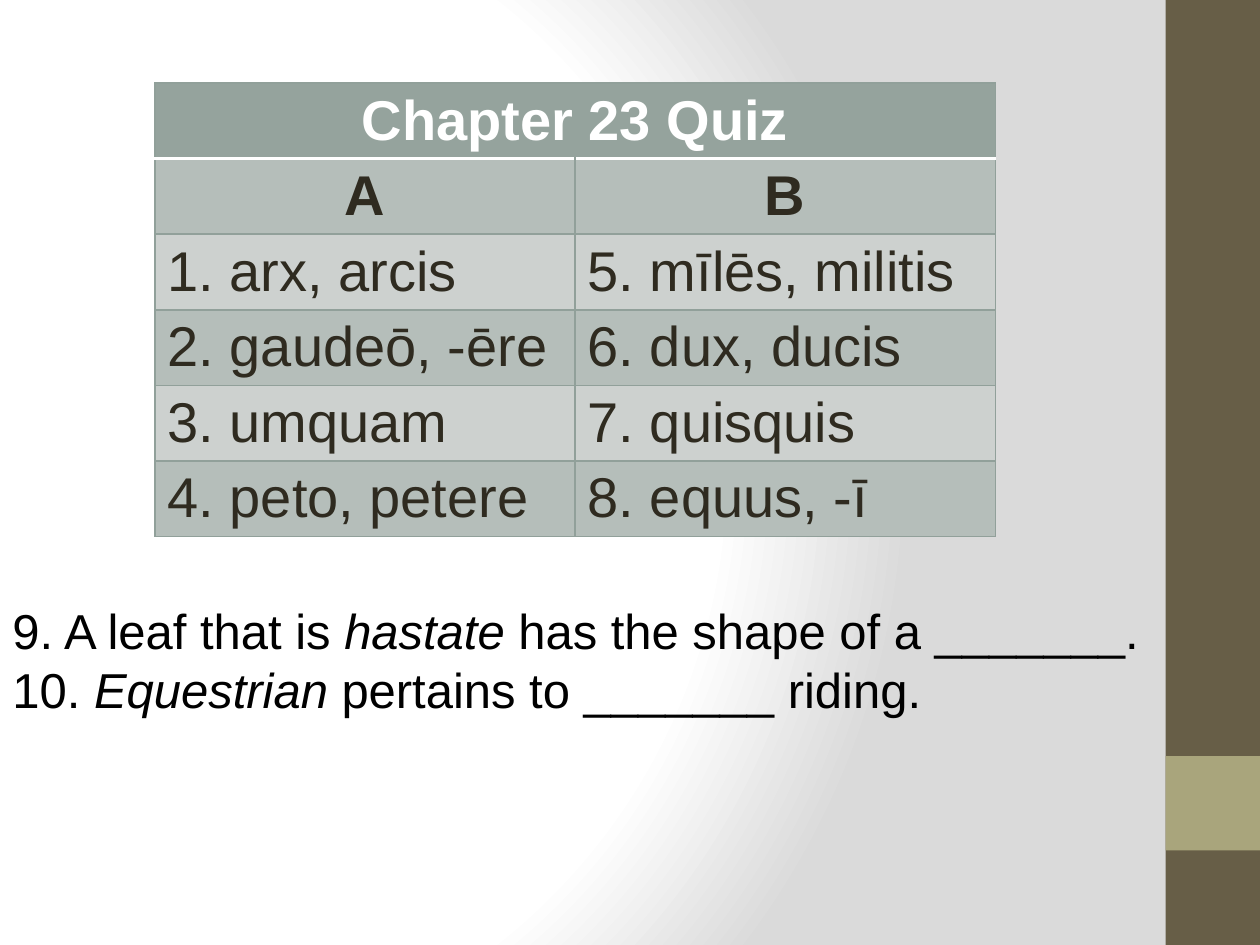
from dataclasses import dataclass

from lxml.etree import SubElement
from pptx import Presentation
from pptx.dml.color import RGBColor as Rgb
from pptx.enum.shapes import MSO_SHAPE as Shape
from pptx.enum.text import MSO_AUTO_SIZE as AutoSize, PP_ALIGN as Align
from pptx.oxml import parse_xml
from pptx.oxml.ns import nsdecls, qn
from pptx.util import Inches, Pt


@dataclass(frozen=True)
class Theme:
    font: str = "Arial"
    table_size: int = 32
    question_size: int = 28
    white: str = "FFFFFF"
    shade: str = "DADADA"
    black: str = "000000"
    ink: str = "2F2B20"
    sidebar: str = "675E47"
    accent: str = "A9A57C"
    header: str = "95A39D"
    dark_band: str = "B5BEBA"
    light_band: str = "CDD1CF"
    grid: str = "91A09A"


THEME = Theme()


def add_text(paragraph, text, *, size, color, bold=False, italic=False):
    run = paragraph.add_run()
    run.text = text
    font = run.font
    font.name, font.size = THEME.font, Pt(size)
    font.bold, font.italic = bold, italic
    font.color.rgb = Rgb.from_string(color)


def add_border(cell, side, color, width):
    line = SubElement(cell._tc.get_or_add_tcPr(), qn(f"a:ln{side}"), w=str(Pt(width)))
    fill = SubElement(line, qn("a:solidFill"))
    SubElement(fill, qn("a:srgbClr"), val=color)


class SlideBuilder:
    def __init__(self, slide, theme):
        self.slide = slide
        self.theme = theme

    def background(self):
        colors = ((0, self.theme.white), (75, self.theme.white), (100, self.theme.shade))
        stops = "".join(
            f'<a:gs pos="{position * 1000}"><a:srgbClr val="{color}"/></a:gs>'
            for position, color in colors
        )
        self.slide.element.cSld.insert(0, parse_xml(
            f'<p:bg {nsdecls("p", "a")}><p:bgPr><a:gradFill rotWithShape="1">'
            f'<a:gsLst>{stops}</a:gsLst><a:path path="circle">'
            '<a:fillToRect l="20000" t="50000" r="100000" b="50000"/></a:path>'
            '</a:gradFill><a:effectLst/></p:bgPr></p:bg>'
        ))

    def block(self, left, top, width, height, color):
        block = self.slide.shapes.add_shape(
            Shape.RECTANGLE, Inches(left), Inches(top), Inches(width), Inches(height))
        block.shadow.inherit = False
        block.fill.solid()
        block.fill.fore_color.rgb = Rgb.from_string(color)
        block.line.fill.background()

    def quiz_table(self, heading, rows, left, top, width, row_height):
        theme = self.theme
        grid = [(heading, ""), *rows]
        table = self.slide.shapes.add_table(
            len(grid), 2, Inches(left), Inches(top),
            Inches(width), Inches(row_height * len(grid))).table
        for row_index, entries in enumerate(grid):
            is_heading = row_index == 0
            is_bold = row_index < 2
            band = theme.dark_band if row_index % 2 else theme.light_band
            rules = {side: (theme.grid, 1) for side in "LRTB"}
            if is_bold:
                rules["B" if is_heading else "T"] = (theme.white, 2)
            for column, entry in enumerate(entries):
                cell = table.cell(row_index, column)
                for side, (color, line_width) in rules.items():
                    add_border(cell, side, color, line_width)
                cell.fill.solid()
                cell.fill.fore_color.rgb = Rgb.from_string(
                    theme.header if is_heading else band)
                if entry:
                    paragraph = cell.text_frame.paragraphs[0]
                    paragraph.alignment = Align.CENTER if is_bold else Align.LEFT
                    add_text(paragraph, entry, size=theme.table_size, bold=is_bold,
                             color=theme.white if is_heading else theme.ink)
        table.cell(0, 0).merge(table.cell(0, 1))

    def questions(self, questions, left, top, width, height):
        frame = self.slide.shapes.add_textbox(
            Inches(left), Inches(top), Inches(width), Inches(height)).text_frame
        frame.word_wrap = True
        frame.auto_size = AutoSize.SHAPE_TO_FIT_TEXT
        for index, (opening, term, ending) in enumerate(questions):
            paragraph = frame.add_paragraph() if index else frame.paragraphs[0]
            for text in (opening, term, ending):
                add_text(paragraph, text, size=self.theme.question_size,
                         color=self.theme.black, italic=text == term)


def main():
    deck = Presentation()
    deck.slide_width, deck.slide_height = Inches(10), Inches(7.5)
    quiz = SlideBuilder(deck.slides.add_slide(deck.slide_layouts[6]), THEME)
    quiz.background()
    quiz.block(9.25, 0, 0.75, 7.5, THEME.sidebar)
    quiz.block(9.25, 6, 0.75, 0.75, THEME.accent)
    quiz.quiz_table("Chapter 23 Quiz", [
        ("A", "B"),
        ("1. arx, arcis", "5. mīlēs, militis"),
        ("2. gaudeō, -ēre", "6. dux, ducis"),
        ("3. umquam", "7. quisquis"),
        ("4. peto, petere", "8. equus, -ī"),
    ], left=1.23, top=0.66, width=6.67, row_height=0.6)
    quiz.questions([
        ("9. A leaf that is ", "hastate", " has the shape of a _______."),
        ("10. ", "Equestrian", " pertains to _______ riding."),
    ], left=0, top=4.72, width=9.22, height=1.04)
    deck.save("out.pptx")


if __name__ == "__main__":
    main()
